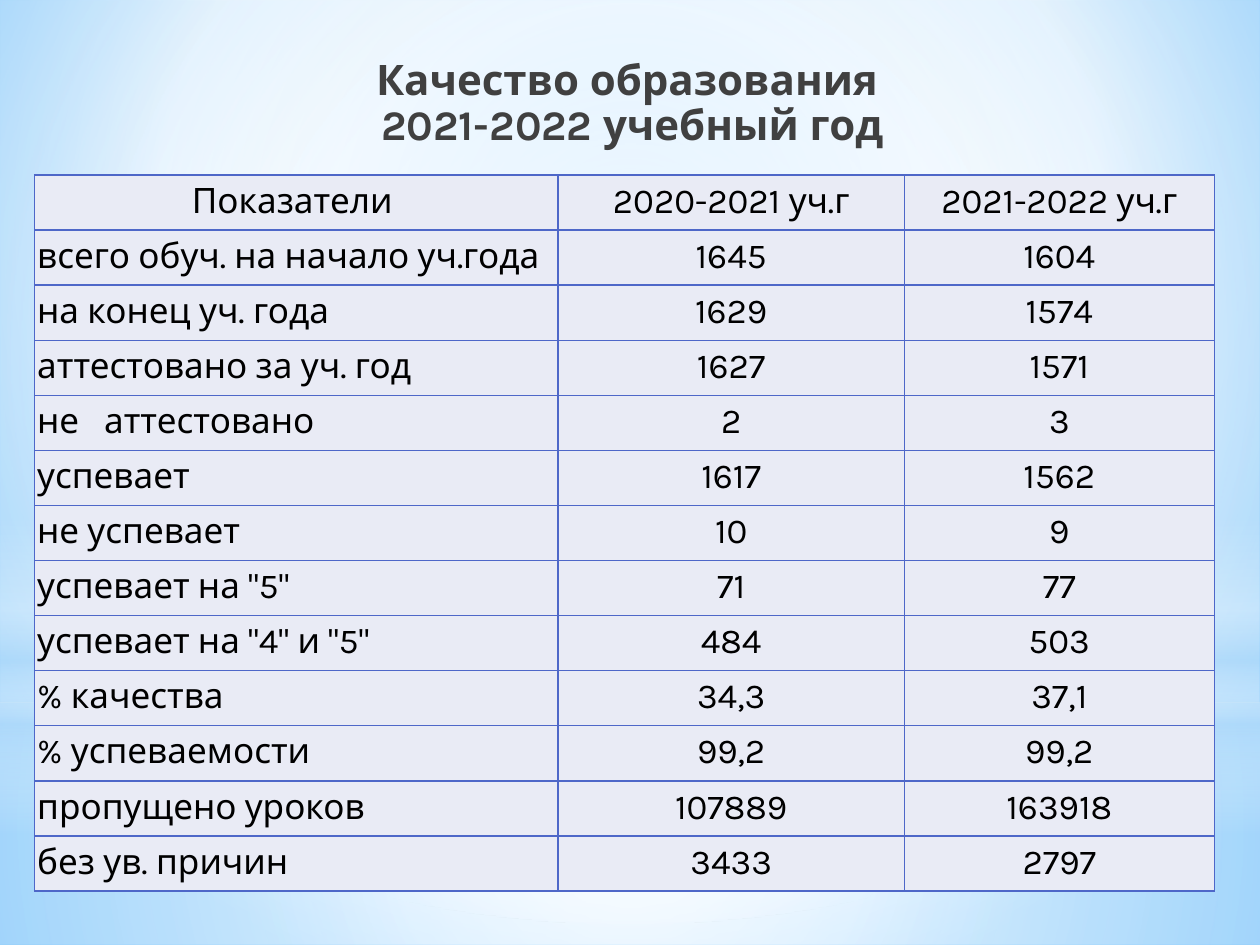
from lxml.etree import SubElement
from pptx import Presentation
from pptx.dml.color import RGBColor
from pptx.enum.shapes import MSO_SHAPE as Preset
from pptx.enum.text import MSO_ANCHOR as Anchor, PP_ALIGN as Align
from pptx.oxml import parse_xml
from pptx.oxml.ns import nsdecls, qn
from pptx.util import Cm, Pt

BLACK = RGBColor(0x00, 0x00, 0x00)
WHITE = RGBColor(0xFF, 0xFF, 0xFF)
CHARCOAL = RGBColor(0x40, 0x40, 0x40)
SKY = RGBColor(0x9E, 0xD5, 0xFF)
AZURE = RGBColor(0x5B, 0xB9, 0xFF)
MIST = RGBColor(0xB4, 0xDC, 0xFA)
CELL_FILL = RGBColor(0xE9, 0xEB, 0xF5)
BORDER = RGBColor(0x4E, 0x67, 0xC8)
CENTRE = (50, 50, 50, 50)


def write_text(frame, text, size, color=BLACK, bold=False, align=Align.CENTER, spacing=1.0):
    para = frame.paragraphs[0]
    para.text = text
    para.alignment = align
    para.line_spacing = spacing
    for span in para.runs:
        span.font.name = "Karla"
        span.font.size = Pt(size)
        span.font.bold = bold
        span.font.color.rgb = color


def paint_gradient(fill, properties, stops, focus=None):
    fill.solid()
    gradient = parse_xml(f'<a:gradFill {nsdecls("a")} rotWithShape="1"><a:gsLst/></a:gradFill>')
    for position, color, alpha in stops:
        stop = SubElement(gradient[0], qn("a:gs"), pos=str(position * 1000))
        shade = SubElement(stop, qn("a:srgbClr"), val=str(color))
        if alpha < 100:
            SubElement(shade, qn("a:alpha"), val=str(alpha * 1000))
    if focus:
        circle = SubElement(gradient, qn("a:path"), path="circle")
        sides = {side: str(share * 1000) for side, share in zip("ltrb", focus)}
        SubElement(circle, qn("a:fillToRect"), **sides)
    else:
        SubElement(gradient, qn("a:lin"), ang="5400000", scaled="0")
    properties.replace(properties.find(qn("a:solidFill")), gradient)


deck = Presentation()
deck.slide_width = Cm(25.4)
deck.slide_height = Cm(19.05)
page = deck.slides.add_slide(deck.slide_layouts[6])

backdrop = page.background.fill
backdrop.solid()
paint_gradient(backdrop, page.element.cSld.bg.bgPr,
               [(0, SKY, 100), (60, WHITE, 100), (100, AZURE, 100)], (20, 10, 20, 60))

glows = [
    (Preset.RECTANGLE, 14.17, 4.88, CENTRE,
     [(0, WHITE, 91), (37, WHITE, 76), (100, MIST, 79)]),
    (Preset.RECTANGLE, 0, 14.17, CENTRE,
     [(0, WHITE, 89), (48, WHITE, 62), (100, MIST, 79)]),
    (Preset.RECTANGLE, 10.46, 6.35, None,
     [(0, WHITE, 0), (29, WHITE, 30), (45, MIST, 40),
      (55, WHITE, 26), (65, MIST, 60), (100, WHITE, 0)]),
    (Preset.OVAL, 4.45, 14.17, CENTRE, [(0, WHITE, 100), (56, WHITE, 0)]),
]
for preset, top, height, focus, stops in glows:
    glow = page.shapes.add_shape(preset, 0, Cm(top), deck.slide_width, Cm(height))
    glow.shadow.inherit = False
    glow.line.fill.background()
    paint_gradient(glow.fill, glow.element.spPr, stops, focus)

title_box = page.shapes.add_textbox(Cm(3.71), Cm(0.91), Cm(18.08), Cm(2.39))
title_box.text_frame.word_wrap = True
title_box.text_frame.vertical_anchor = Anchor.MIDDLE
write_text(title_box.text_frame, "Качество образования \v2021-2022 учебный год", 24,
           color=CHARCOAL, bold=True, spacing=0.9)

rows = [
    ("Показатели ", "2020-2021 уч.г", "2021-2022 уч.г"),
    ("всего обуч. на начало уч.года", "1645", "1604"),
    ("на конец уч. года", "1629", "1574"),
    ("аттестовано за уч. год", "1627", "1571"),
    ("не   аттестовано", "2", "3"),
    ("успевает", "1617", "1562"),
    ("не успевает", "10", "9"),
    ('успевает на "5"', "71", "77"),
    ('успевает на "4" и "5"', "484", "503"),
    ("% качества", "34,3", "37,1"),
    ("% успеваемости", "99,2", "99,2"),
    ("пропущено уроков", "107889", "163918"),
    ("без ув. причин", "3433", "2797"),
]
widths = [10.55, 6.98, 6.25]
row_height = 1.11
table = page.shapes.add_table(len(rows), len(widths), Cm(0.7), Cm(3.53),
                              Cm(sum(widths)), Cm(row_height * len(rows))).table
for column, width in zip(table.columns, widths):
    column.width = Cm(width)
for row_index, values in enumerate(rows):
    table.rows[row_index].height = Cm(row_height)
    for column_index, value in enumerate(values):
        cell = table.cell(row_index, column_index)
        cell.margin_left = cell.margin_right = Cm(0.05)
        cell.margin_top = cell.margin_bottom = 0
        cell.fill.solid()
        cell.fill.fore_color.rgb = CELL_FILL
        is_label = row_index > 0 and column_index == 0
        write_text(cell.text_frame, value, 20, spacing=1.15,
                   align=Align.LEFT if is_label else Align.CENTER)
        properties = cell._tc.get_or_add_tcPr()
        for order, side in enumerate("LRTB"):
            properties.insert(order, parse_xml(
                f'<a:ln{side} {nsdecls("a")} w="{Pt(1)}"><a:solidFill>'
                f'<a:srgbClr val="{BORDER}"/></a:solidFill></a:ln{side}>'))

deck.save("out.pptx")
